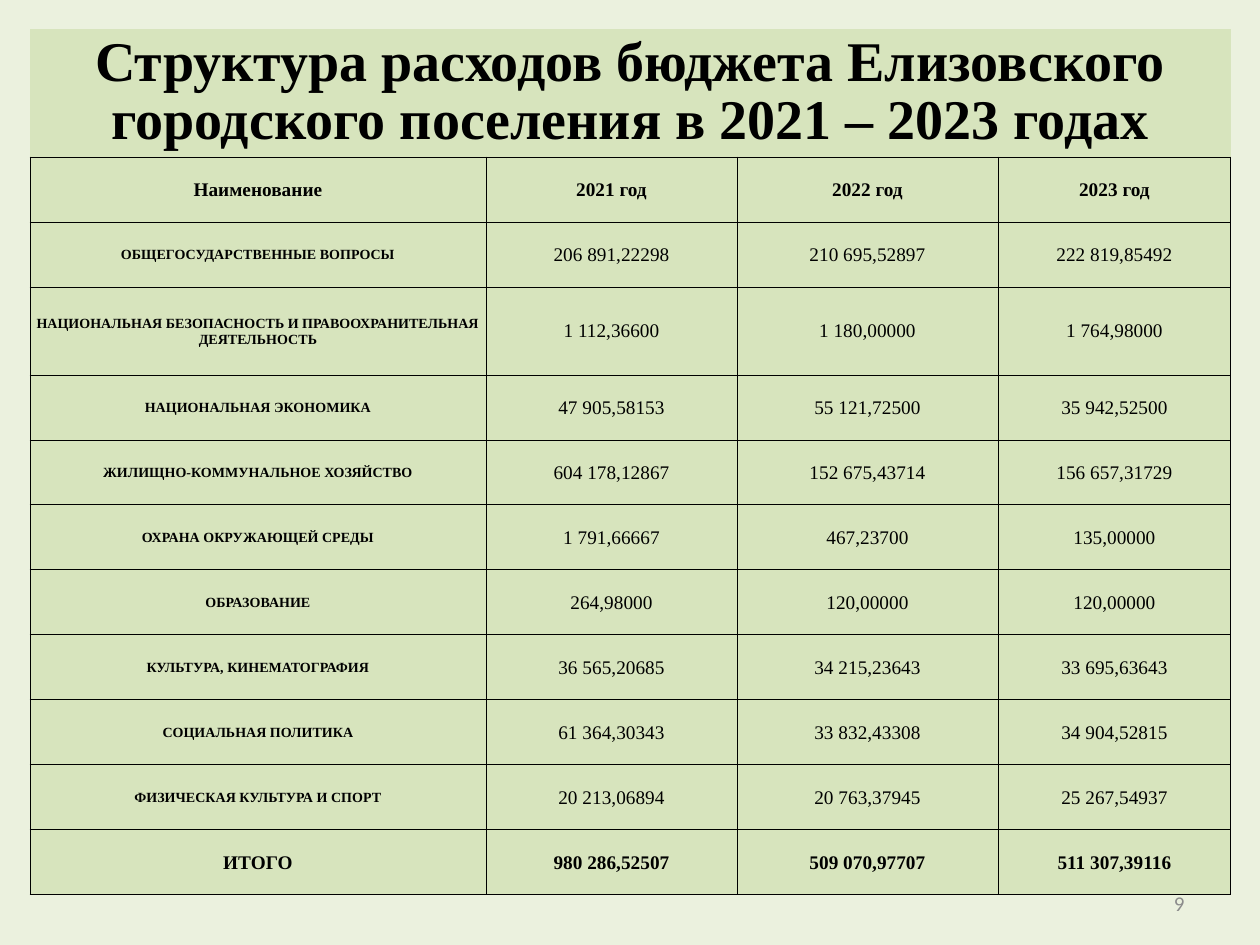
from pptx import Presentation
from pptx.dml.color import RGBColor
from pptx.enum.text import MSO_ANCHOR as Anchor, PP_ALIGN as Align
from pptx.oxml.ns import qn
from pptx.util import Pt
from lxml.etree import SubElement as Sub

SCALE = 914400 / 126
SERIF = "Times New Roman"
TITLE = "Структура расходов бюджета Елизовского городского поселения в 2021 – 2023 годах"
ROWS = [
    ("Наименование", "2021 год", "2022 год", "2023 год"),
    ("ОБЩЕГОСУДАРСТВЕННЫЕ ВОПРОСЫ", "206 891,22298", "210 695,52897", "222 819,85492"),
    ("НАЦИОНАЛЬНАЯ БЕЗОПАСНОСТЬ И ПРАВООХРАНИТЕЛЬНАЯ ДЕЯТЕЛЬНОСТЬ",
     "1 112,36600", "1 180,00000", "1 764,98000"),
    ("НАЦИОНАЛЬНАЯ ЭКОНОМИКА", "47 905,58153", "55 121,72500", "35 942,52500"),
    ("ЖИЛИЩНО-КОММУНАЛЬНОЕ ХОЗЯЙСТВО", "604 178,12867", "152 675,43714", "156 657,31729"),
    ("ОХРАНА ОКРУЖАЮЩЕЙ СРЕДЫ", "1 791,66667", "467,23700", "135,00000"),
    ("ОБРАЗОВАНИЕ", "264,98000", "120,00000", "120,00000"),
    ("КУЛЬТУРА, КИНЕМАТОГРАФИЯ", "36 565,20685", "34 215,23643", "33 695,63643"),
    ("СОЦИАЛЬНАЯ ПОЛИТИКА", "61 364,30343", "33 832,43308", "34 904,52815"),
    ("ФИЗИЧЕСКАЯ КУЛЬТУРА И СПОРТ", "20 213,06894", "20 763,37945", "25 267,54937"),
    ("ИТОГО", "980 286,52507", "509 070,97707", "511 307,39116"),
]
COLS = [456, 251, 261, 233]
TALLS = [128, 65, 65, 88] + [65] * 8


def px(n):
    return round(n * SCALE)


def tint(code):
    return RGBColor.from_string(code)


def write(frame, text, size, font, code, bold, align):
    para = frame.paragraphs[0]
    para.alignment = align
    run = para.add_run()
    run.text = text
    run.font.size = Pt(size)
    run.font.name = font
    run.font.bold = bold
    run.font.color.rgb = tint(code)


def edge(cell, sides):
    props = cell._tc.get_or_add_tcPr()
    for side in "LRTB":
        line = Sub(props, qn(f"a:ln{side}"), w=str(Pt(0.5)))
        if side in sides:
            fill = Sub(line, qn("a:solidFill"))
            Sub(fill, qn("a:srgbClr"), val="000000")
        else:
            Sub(line, qn("a:noFill"))


def style(cell, sides):
    edge(cell, sides)
    cell.fill.solid()
    cell.fill.fore_color.rgb = tint("D7E4BD")
    cell.vertical_anchor = Anchor.MIDDLE
    cell.margin_left = cell.margin_right = cell.margin_top = px(1)
    cell.margin_bottom = 0


def budget(slide, x, y):
    shape = slide.shapes.add_table(
        len(TALLS), len(COLS), px(x), px(y), px(sum(COLS)), px(sum(TALLS)))
    table = shape.table
    table.first_row = table.horz_banding = False
    for col, wide in zip(table.columns, COLS):
        col.width = px(wide)
    for row, tall in zip(table.rows, TALLS):
        row.height = px(tall)
    for cell in table.rows[0].cells:
        style(cell, "B")
    head = table.cell(0, 0)
    head.merge(table.cell(0, len(COLS) - 1))
    write(head.text_frame, TITLE, 32, SERIF, "000000", True, Align.CENTER)
    head.text_frame.paragraphs[0].line_spacing = Pt(33)
    last = len(ROWS)
    for r, row in enumerate(ROWS, 1):
        for c, text in enumerate(row):
            cell = table.cell(r, c)
            style(cell, "LRTB")
            strong = r in (1, last)
            size = 8 if c == 0 and not strong else 11
            write(cell.text_frame, text, size, SERIF, "000000", strong or c == 0, Align.CENTER)


def number(slide, x, y, w, h):
    frame = slide.shapes.add_textbox(px(x), px(y), px(w), px(h)).text_frame
    frame.word_wrap = True
    frame.vertical_anchor = Anchor.MIDDLE
    write(frame, "9", 12, "Calibri", "8C8C8C", False, Align.RIGHT)


def main():
    deck = Presentation()
    deck.slide_width, deck.slide_height = px(1260), px(945)
    slide = deck.slides.add_slide(deck.slide_layouts[6])
    back = slide.background.fill
    back.solid()
    back.fore_color.rgb = tint("EBF1DE")
    budget(slide, 30, 29)
    number(slide, 903, 878, 294, 50)
    deck.save("out.pptx")


if __name__ == "__main__":
    main()
